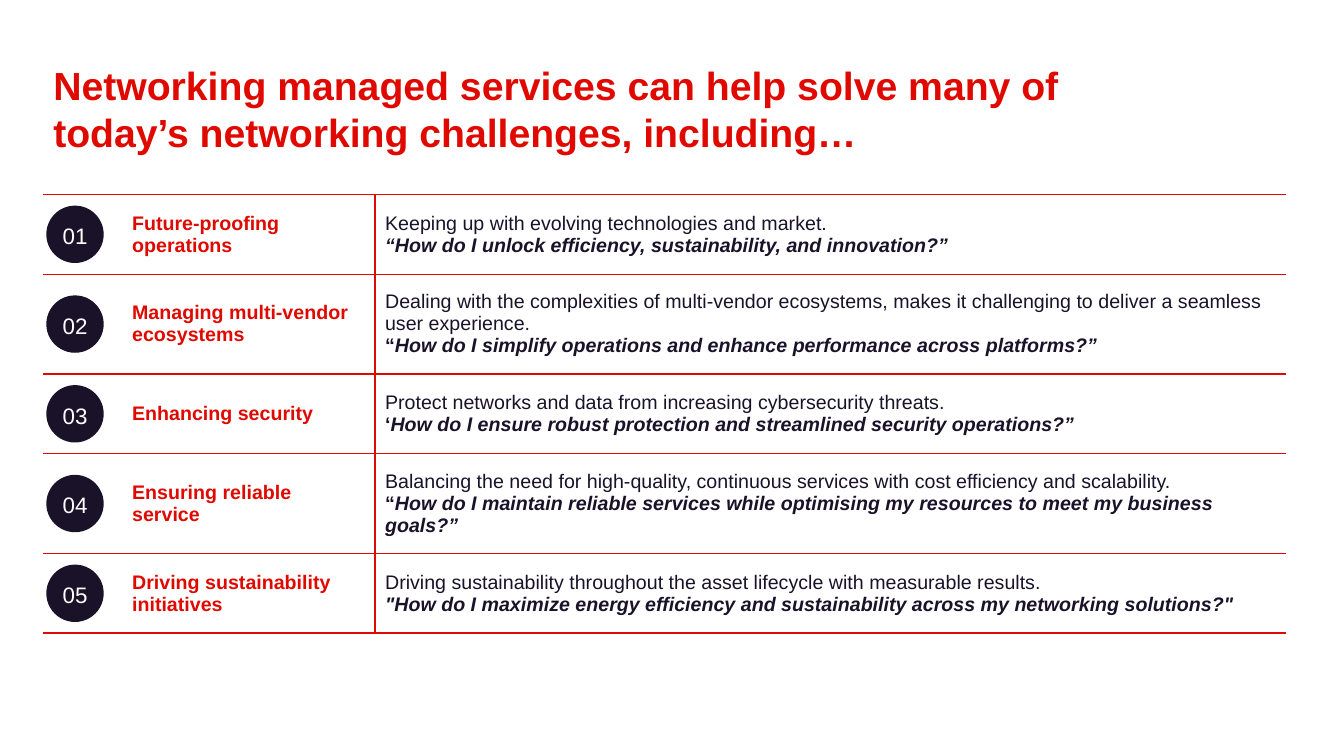
from itertools import accumulate

from lxml.etree import SubElement
from pptx import Presentation
from pptx.dml.color import RGBColor
from pptx.enum.shapes import MSO_SHAPE
from pptx.enum.text import MSO_ANCHOR, PP_ALIGN
from pptx.oxml.ns import qn
from pptx.util import Pt

COLORS = {"red": "DF0900", "ink": "191229", "white": "FFFFFF"}
FONT = "Arial"
TITLE = "Networking managed services can help solve many of today’s networking challenges, including…"
CHALLENGES = [
    ("Future-proofing operations",
     "Keeping up with evolving technologies and market.",
     "“", "How do I unlock efficiency, sustainability, and innovation?”", True),
    ("Managing multi-vendor ecosystems",
     "Dealing with the complexities of multi-vendor ecosystems, makes it challenging "
     "to deliver a seamless user experience.",
     "“", "How do I simplify operations and enhance performance across platforms?”", False),
    ("Enhancing security",
     "Protect networks and data from increasing cybersecurity threats.",
     "‘", "How do I ensure robust protection and streamlined security operations?”", False),
    ("Ensuring reliable service",
     "Balancing the need for high-quality, continuous services with cost efficiency and scalability.",
     "“", "How do I maintain reliable services while optimising my resources to meet my business goals?”", False),
    ("Driving sustainability initiatives",
     "Driving sustainability throughout the asset lifecycle with measurable results.",
     '"', 'How do I maximize energy efficiency and sustainability across my networking solutions?"', True),
]
TABLE_LEFT, TABLE_TOP = 31, 139
COLUMN_WIDTHS = [56.2, 180.7, 650.9]
ROW_HEIGHTS = [56.8, 71.4, 56.8, 71.4, 56.8]
BADGE_LEFT, BADGE_SIZE = 33.1, 41
PLAIN_TABLE_STYLE = "{2D5ABB26-0587-4C30-8999-92F81FD0307C}"


def add_run(paragraph, text, size, color, bold=False, italic=False):
    run = paragraph.add_run()
    run.text = text
    run.font.name, run.font.size = FONT, Pt(size)
    run.font.bold, run.font.italic = bold, italic
    run.font.color.rgb = RGBColor.from_string(COLORS[color])


def rule_cell(cell, sides):
    properties = cell._tc.get_or_add_tcPr()
    for side in sides:
        border = SubElement(properties, qn(f"a:ln{side}"), w=str(Pt(1)))
        SubElement(SubElement(border, qn("a:solidFill")), qn("a:srgbClr"), val=COLORS["red"])
    cell.fill.background()
    cell.vertical_anchor = MSO_ANCHOR.MIDDLE


def add_title(slide):
    frame = slide.shapes.add_textbox(Pt(31), Pt(37.4), Pt(803.5), Pt(49.7)).text_frame
    frame.word_wrap = True
    frame.margin_top = Pt(6.3)
    frame.paragraphs[0].space_after = Pt(2.7)
    add_run(frame.paragraphs[0], TITLE, 28, "red", bold=True)


def add_challenges(slide):
    frame = slide.shapes.add_table(len(CHALLENGES), len(COLUMN_WIDTHS), Pt(TABLE_LEFT), Pt(TABLE_TOP),
                                   Pt(sum(COLUMN_WIDTHS)), Pt(sum(ROW_HEIGHTS)))
    table = frame.table
    table.first_row = table.horz_banding = False
    table._tbl.tblPr.find(qn("a:tableStyleId")).text = PLAIN_TABLE_STYLE
    for column, width in zip(table.columns, COLUMN_WIDTHS):
        column.width = Pt(width)
    for row, height, (name, problem, mark, question, slanted_mark) in zip(table.rows, ROW_HEIGHTS, CHALLENGES):
        row.height = Pt(height)
        for cell, sides in zip(row.cells, ("TB", "RTB", "LTB")):
            rule_cell(cell, sides)
        name_cell, detail_cell = row.cells[1], row.cells[2]
        name_cell.margin_right = Pt(10)
        heading = name_cell.text_frame.paragraphs[0]
        heading.space_after = Pt(6)
        add_run(heading, name, 14, "red", bold=True)
        detail = detail_cell.text_frame
        add_run(detail.paragraphs[0], problem, 14, "ink")
        quote = detail.add_paragraph()
        if slanted_mark:
            add_run(quote, mark + question, 14, "ink", bold=True, italic=True)
        else:
            add_run(quote, mark, 14, "ink", bold=True)
            add_run(quote, question, 14, "ink", bold=True, italic=True)


def add_badges(slide):
    row_tops = accumulate(ROW_HEIGHTS, initial=TABLE_TOP)
    for number, (top, height) in enumerate(zip(row_tops, ROW_HEIGHTS), 1):
        badge = slide.shapes.add_shape(MSO_SHAPE.OVAL, Pt(BADGE_LEFT), Pt(top + (height - BADGE_SIZE) / 2),
                                       Pt(BADGE_SIZE), Pt(BADGE_SIZE))
        badge.shadow.inherit = False
        badge.fill.solid()
        badge.fill.fore_color.rgb = RGBColor.from_string(COLORS["ink"])
        badge.line.fill.background()
        frame = badge.text_frame
        frame.margin_left = frame.margin_right = frame.margin_top = frame.margin_bottom = Pt(2.9)
        frame.vertical_anchor = MSO_ANCHOR.MIDDLE
        label = frame.paragraphs[0]
        label.alignment, label.line_spacing = PP_ALIGN.CENTER, 1.1
        label.space_after = Pt(2)
        add_run(label, f"{number:02}", 16, "white")


def main():
    """Build the slide of networking challenges and save it."""
    deck = Presentation()
    deck.slide_width, deck.slide_height = Pt(960), Pt(540)
    slide = deck.slides.add_slide(deck.slide_layouts[6])
    add_title(slide)
    add_challenges(slide)
    add_badges(slide)
    deck.save("out.pptx")


if __name__ == "__main__":
    main()
